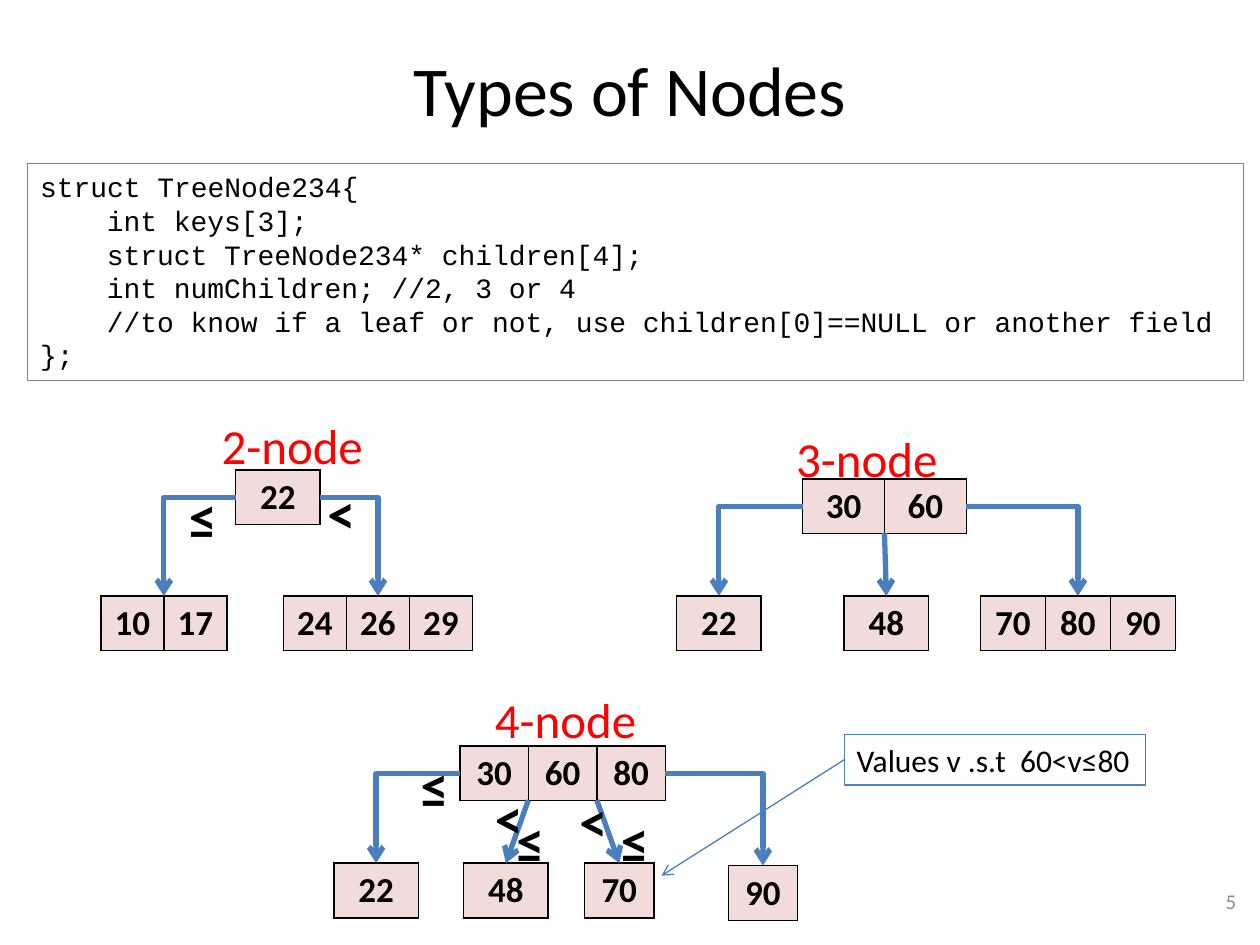
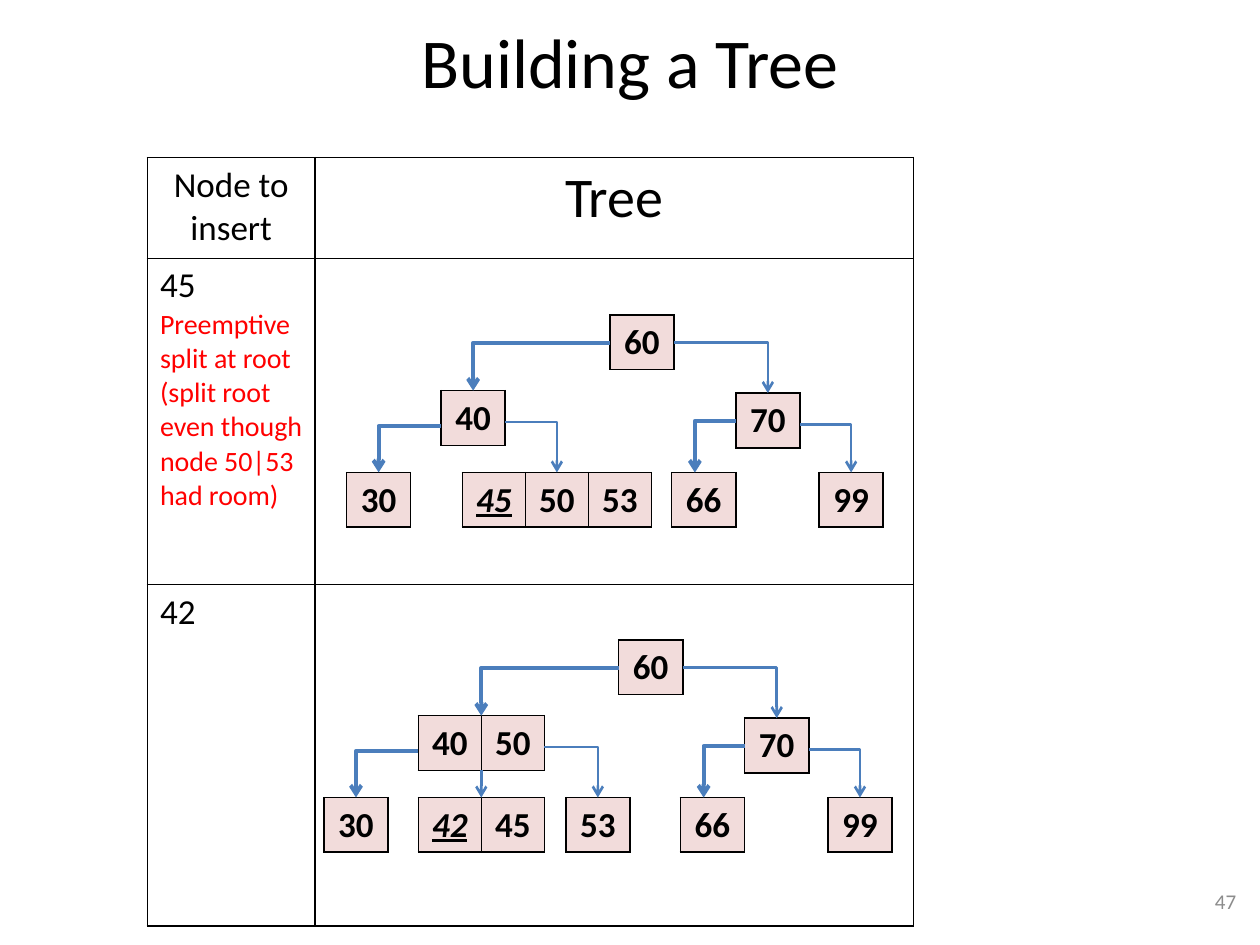
import dataclasses

import pptx
import pptx.dml.color
import pptx.enum.shapes
import pptx.enum.text
import pptx.oxml
import pptx.oxml.ns
import pptx.util

Inches = pptx.util.Inches
Align = pptx.enum.text.PP_ALIGN
Anchor = pptx.enum.text.MSO_ANCHOR


@dataclasses.dataclass(frozen=True)
class Theme:
    font: str = "Calibri"
    code_font: str = "Courier New"
    ink: str = "000000"
    accent: str = "FF0000"
    muted: str = "8C8C8C"
    frame: str = "808080"
    callout: str = "4F81BD"
    edge: str = "4B7EBC"
    node_fill: str = "F2DCDB"
    title_size: int = 40
    sign_size: int = 32
    caption_size: int = 28
    key_size: int = 20
    label_size: int = 18
    code_size: int = 16
    number_size: int = 12
    hairline: float = 0.75
    border: float = 1
    node_height: float = 0.43


THEME = Theme()


@dataclasses.dataclass(frozen=True)
class Node:
    left: float
    top: float
    width: float
    keys: str
    entry_shift: float = 0

    @property
    def labels(self):
        return self.keys.split()

    @property
    def entry(self):
        return self.left + self.width / 2 + self.entry_shift, self.top


def color(value):
    return pptx.dml.color.RGBColor.from_string(value)


def write(frame, text, size, font=THEME.font, ink=THEME.ink, bold=False,
          emphasis=False, align=Align.LEFT, new_line=False):
    para = frame.add_paragraph() if new_line else frame.paragraphs[0]
    para.alignment = align
    span = para.add_run()
    span.text = text
    span.font.size = pptx.util.Pt(size)
    span.font.name = font
    span.font.bold = bold
    span.font.italic = span.font.underline = emphasis
    span.font.color.rgb = color(ink)
    return para


def add_label(page, left, top, width, height, text, size,
              anchor=Anchor.TOP, **style):
    box = page.shapes.add_textbox(*map(Inches, (left, top, width, height)))
    box.text_frame.word_wrap = True
    box.text_frame.vertical_anchor = anchor
    write(box.text_frame, text, size, **style)


def add_frame(page, left, top, width, height, line):
    box = page.shapes.add_shape(pptx.enum.shapes.MSO_SHAPE.RECTANGLE,
                                *map(Inches, (left, top, width, height)))
    box.shadow.inherit = False
    box.fill.background()
    box.line.color.rgb = color(line)
    box.line.width = pptx.util.Pt(THEME.hairline)
    frame = box.text_frame
    frame.word_wrap = False
    frame.auto_size = pptx.enum.text.MSO_AUTO_SIZE.SHAPE_TO_FIT_TEXT
    frame.vertical_anchor = Anchor.TOP
    return box


def add_arrow(page, start, end, weight, elbow=False):
    kinds = pptx.enum.shapes.MSO_CONNECTOR
    arrow = page.shapes.add_connector(kinds.ELBOW if elbow else kinds.STRAIGHT,
                                      *map(Inches, (*start, *end)))
    arrow.line.color.rgb = color(THEME.edge)
    arrow.line.width = pptx.util.Pt(weight)
    properties = arrow._element.spPr
    if elbow:
        properties.find(pptx.oxml.ns.qn("a:prstGeom")).set("prst", "bentConnector2")
        if end[0] < start[0]:
            transform = properties.find(pptx.oxml.ns.qn("a:xfrm"))
            del transform.attrib["flipH"]
            transform.set("rot", "10800000")
            transform.set("flipV", "1")
    namespace = pptx.oxml.ns.nsdecls("a")
    properties.find(pptx.oxml.ns.qn("a:ln")).append(
        pptx.oxml.parse_xml(f'<a:tailEnd {namespace} type="arrow"/>'))
    properties.append(pptx.oxml.parse_xml(f"<a:effectLst {namespace}/>"))
    return arrow


def add_grid(page, left, top, widths, heights, fill=None):
    table = page.shapes.add_table(
        len(heights), len(widths),
        *map(Inches, (left, top, sum(widths), sum(heights)))).table
    table.first_row = table.horz_banding = False
    for column, width in zip(table.columns, widths):
        column.width = Inches(width)
    for row, height in zip(table.rows, heights):
        row.height = Inches(height)
    for cell in table.iter_cells():
        if fill:
            cell.fill.solid()
            cell.fill.fore_color.rgb = color(fill)
        else:
            cell.fill.background()
        properties = cell._tc.get_or_add_tcPr()
        for index, side in enumerate("LRTB"):
            properties.insert(index, pptx.oxml.parse_xml(
                f'<a:ln{side} {pptx.oxml.ns.nsdecls("a")} '
                f'w="{pptx.util.Pt(THEME.border)}"><a:solidFill>'
                f'<a:srgbClr val="{THEME.ink}"/></a:solidFill></a:ln{side}>'))
    return table


def add_node(page, origin, node, fresh=None):
    labels = node.labels
    table = add_grid(page, origin[0] + node.left, origin[1] + node.top,
                     [node.width / len(labels)] * len(labels),
                     [THEME.node_height], THEME.node_fill)
    for cell, label in zip(table.iter_cells(), labels):
        write(cell.text_frame, label, THEME.key_size, bold=True,
              emphasis=label == fresh, align=Align.CENTER)


def join_children(page, origin, parent, children, weights=(3, 3, 3),
                  drops=(0.22, 0.22)):
    def place(point):
        return origin[0] + point[0], origin[1] + point[1]

    first, *middle, last = children
    left_weight, middle_weight, right_weight = weights
    add_arrow(page, place((parent.left, parent.top + drops[0])),
              place(first.entry), left_weight, elbow=True)
    add_arrow(page, place((parent.left + parent.width, parent.top + drops[1])),
              place(last.entry), right_weight, elbow=True)
    step = parent.width / len(parent.labels)
    for index, child in enumerate(middle, 1):
        start = parent.left + index * step, parent.top + THEME.node_height
        add_arrow(page, place(start), place(child.entry), middle_weight)


def add_family(page, origin, caption, caption_left, root, children, signs=()):
    left, top = origin
    for node in (root, *children):
        add_node(page, origin, node)
    join_children(page, origin, root, children)
    add_label(page, left + caption_left, top, 1.58, 0.67, caption,
              THEME.caption_size, ink=THEME.accent)
    for sign, sign_left, sign_top in signs:
        add_label(page, left + sign_left, top + sign_top, 0.42, 0.64, sign,
                  THEME.sign_size, bold=True)


def add_insertion_tree(page, origin, branch, branch_leaves, fresh):
    root = Node(2.34, 0.45, 0.51, "60")
    right = Node(3.34, 1.07, 0.51, "70")
    right_leaves = [Node(2.83, 1.7, 0.51, "66", -0.07), Node(4, 1.7, 0.51, "99")]
    for node in (root, branch, right, *branch_leaves, *right_leaves):
        add_node(page, origin, node, fresh)
    weights = 2.25, 1.5, 1.5
    join_children(page, origin, root, [branch, right], weights)
    join_children(page, origin, branch, branch_leaves, weights, (0.28, 0.25))
    join_children(page, origin, right, right_leaves, weights, (0.22, 0.25))


def add_code(page, left, top, width, height):
    frame = add_frame(page, left, top, width, height, THEME.frame).text_frame
    lines = [
        (0, "struct TreeNode234{"),
        (1, "int keys[3];"),
        (1, "struct TreeNode234* children[4];"),
        (1, "int numChildren; //2, 3 or 4"),
        (1, "//to know if a leaf or not, use children[0]==NULL or another field"),
        (0, "};"),
    ]
    for index, (level, text) in enumerate(lines):
        para = write(frame, text, THEME.code_size, font=THEME.code_font,
                     new_line=index > 0)
        para._p.get_or_add_pPr().set("marL", str(Inches(0.53 * level)))


def add_callout(page, left, top, width, height, target):
    box = add_frame(page, left, top, width, height, THEME.callout)
    write(box.text_frame, "Values v .s.t  60<v≤80", THEME.label_size)
    arrow = add_arrow(page, (left, top + height / 2), target, THEME.hairline)
    arrow.begin_connect(box, 1)


def add_page(deck, title, title_height, number):
    page = deck.slides.add_slide(deck.slide_layouts.get_by_name("Title Only"))
    heading = page.shapes.title
    heading.left, heading.top, heading.width, heading.height = map(
        Inches, (0.5, 0.08, 9, title_height))
    heading.text_frame.vertical_anchor = Anchor.MIDDLE
    write(heading.text_frame, title, THEME.title_size, align=Align.CENTER)
    add_label(page, 7.58, 6.95, 2.33, 0.4, number, THEME.number_size,
              anchor=Anchor.MIDDLE, ink=THEME.muted, align=Align.RIGHT)
    return page


def build_node_types(deck):
    page = add_page(deck, "Types of Nodes", 1.25, "5")
    add_family(page, (0.8, 3.25), "2-node", 0.86,
               Node(1.07, 0.48, 0.67, "22"),
               [Node(0, 1.48, 1, "10 17"), Node(1.45, 1.48, 1.5, "24 26 29")],
               [("≤", 0.6, 0.54), ("<", 1.7, 0.5)])
    add_family(page, (5.37, 3.35), "3-node", 0.85,
               Node(1, 0.45, 1.3, "30 60"),
               [Node(0, 1.38, 0.67, "22"), Node(1.33, 1.38, 0.67, "48"),
                Node(2.41, 1.38, 1.55, "70 80 90")])
    add_family(page, (2.65, 5.42), "4-node", 1.18,
               Node(1, 0.5, 1.63, "30 60 80"),
               [Node(0, 1.43, 0.67, "22"), Node(1.03, 1.43, 0.67, "48"),
                Node(1.99, 1.43, 0.55, "70"), Node(3.13, 1.45, 0.55, "90")],
               [("≤", 0.59, 0.5), ("≤", 1.35, 0.94), ("≤", 2.18, 0.94),
                ("<", 1.18, 0.75), ("<", 1.85, 0.77)])
    add_callout(page, 6.7, 5.83, 2.39, 0.4, target=(5.25, 6.95))
    add_code(page, 0.22, 1.3, 9.65, 1.72)


def add_insertion_table(page, left, top):
    table = add_grid(page, left, top, [1.33, 4.75], [0.8, 2.59, 2.71])
    write(table.cell(0, 0).text_frame, "Node to insert", THEME.key_size,
          align=Align.CENTER)
    write(table.cell(0, 1).text_frame, "Tree", THEME.sign_size,
          align=Align.CENTER)
    for row, key in enumerate(("45", "42"), 1):
        write(table.cell(row, 0).text_frame, key, THEME.key_size)
    write(table.cell(1, 0).text_frame,
          "Preemptive split at root (split root even though node 50|53 had room)",
          THEME.code_size, ink=THEME.accent, new_line=True)


def build_tree_steps(deck):
    page = add_page(deck, "Building a Tree", 0.8, "47")
    add_insertion_table(page, 1.17, 1.25)
    add_insertion_tree(page, (2.5, 2.05), Node(1, 1.05, 0.51, "40"),
                       [Node(0.25, 1.7, 0.51, "30"),
                        Node(1.17, 1.7, 1.5, "45 50 53")], fresh="45")
    add_insertion_tree(page, (2.57, 4.63), Node(0.75, 1.05, 1, "40 50"),
                       [Node(0, 1.7, 0.51, "30"), Node(0.75, 1.7, 1, "42 45"),
                        Node(1.92, 1.7, 0.51, "53")], fresh="42")


def main():
    deck = pptx.Presentation()
    deck.slide_width, deck.slide_height = Inches(10), Inches(7.5)
    build_node_types(deck)
    build_tree_steps(deck)
    deck.save("out.pptx")


if __name__ == "__main__":
    main()
